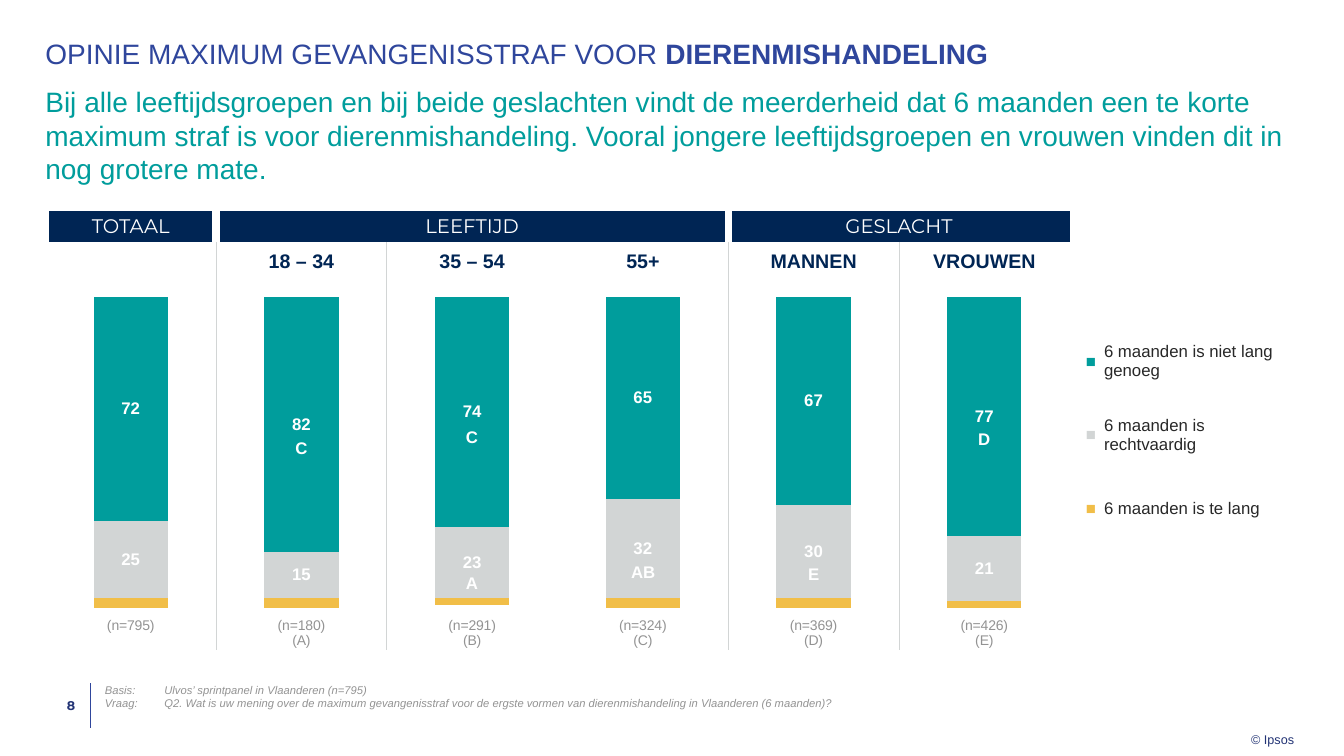
from dataclasses import dataclass

from pptx import Presentation
from pptx.chart.data import CategoryChartData
from pptx.dml.color import RGBColor
from pptx.enum.chart import XL_CHART_TYPE, XL_TICK_LABEL_POSITION, XL_TICK_MARK
from pptx.enum.shapes import MSO_CONNECTOR
from pptx.enum.text import MSO_ANCHOR, PP_ALIGN
from pptx.oxml import parse_xml
from pptx.oxml.ns import nsdecls, qn
from pptx.oxml.xmlchemy import OxmlElement
from pptx.util import Emu, Pt

SCALE = 9144  # EMU in one px, 100 px to the inch
CENTER, RIGHT = PP_ALIGN.CENTER, PP_ALIGN.RIGHT
MIDDLE = MSO_ANCHOR.MIDDLE


@dataclass(frozen=True)
class Theme:
    blue: str = "2F469C"
    ink: str = "233475"
    navy: str = "002554"
    teal: str = "009D9C"
    silver: str = "D2D5D5"
    gold: str = "F1BE48"
    gray: str = "939393"
    dark: str = "282828"
    white: str = "FFFFFF"
    font: str = "Arial"
    head: str = "Montserrat"
    big: int = 20
    mid: int = 14
    body: int = 12
    axis: int = 10
    small: int = 9
    note: int = 8


def px(n):
    return Emu(round(n * SCALE))


def rgb(code):
    return RGBColor.from_string(code)


def style(font, size, color, face, bold=False, italic=False):
    font.size, font.name, font.bold, font.italic = Pt(size), face, bold, italic
    font.color.rgb = rgb(color)


def write(frame, text, size=12, color="282828", face="Arial", bold=False,
          italic=False, align=None, space=None, tab=None):
    """Fill a frame; lines are paragraphs, and parts after | switch bold."""
    for i, line in enumerate(text.split("\n")):
        para = frame.add_paragraph() if i else frame.paragraphs[0]
        if tab:
            stops = OxmlElement("a:tabLst")
            stop = OxmlElement("a:tab")
            stop.set("pos", str(px(tab)))
            stop.set("algn", "l")
            stops.append(stop)
            para._p.get_or_add_pPr().append(stops)
        para.alignment, para.line_spacing = align, space
        for j, part in enumerate(line.split("|")):
            run = para.add_run()
            run.text = part
            style(run.font, size, color, face, bold != bool(j % 2), italic)


def inset(item, left=0, top=0, right=0):
    item.margin_left, item.margin_top = px(left), px(top)
    item.margin_right, item.margin_bottom = px(right), 0


class Deck:
    def __init__(self, theme):
        self.theme = theme
        self.file = Presentation()
        self.file.slide_width, self.file.slide_height = px(1333), px(750)
        self.slide = self.file.slides.add_slide(self.file.slide_layouts[6])
        self.shapes = self.slide.shapes

    def text(self, box, text, wrap=True, anchor=MSO_ANCHOR.TOP, top=0, right=0, **form):
        frame = self.shapes.add_textbox(*map(px, box)).text_frame
        frame.word_wrap, frame.vertical_anchor = wrap, anchor
        inset(frame, top=top, right=right)
        write(frame, text, **form)

    def line(self, x1, y1, x2, y2, color, width):
        line = self.shapes.add_connector(MSO_CONNECTOR.STRAIGHT, *map(px, (x1, y1, x2, y2)))
        line.line.color.rgb, line.line.width = rgb(color), Pt(width)
        line._element.spPr.append(OxmlElement("a:effectLst"))

    def table(self, box, cols, rows, pad=0):
        shape = self.shapes.add_table(len(rows), len(cols), *map(px, box))
        table = shape.table
        table.first_row = table.horz_banding = False
        plain = "{2D5ABB26-0587-4C30-8999-92F81FD0307C}"
        table._tbl.tblPr.find(qn("a:tableStyleId")).text = plain
        for col, width in zip(table.columns, cols):
            col.width = px(width)
        for row, height in zip(table.rows, rows):
            row.height = px(height)
        for cell in table.iter_cells():
            cell.fill.background()
            cell.vertical_anchor = MIDDLE
            inset(cell, left=pad, right=pad)
        return table

    def edge(self, cell, side, color, width):
        cell._tc.get_or_add_tcPr().insert(0, parse_xml(
            f'<a:ln{side} {nsdecls("a")} w="{Pt(width)}"><a:solidFill>'
            f'<a:srgbClr val="{color}"/></a:solidFill></a:ln{side}>'))

    def chart(self, box, names, rows, plot):
        t = self.theme
        data = CategoryChartData()
        data.categories = names
        for label, nums, _ in rows:
            data.add_series(label, nums)
        chart = self.shapes.add_chart(
            XL_CHART_TYPE.COLUMN_STACKED, *map(px, box), data).chart
        chart.has_legend = chart.has_title = False
        style(chart.font, t.axis, t.dark, t.font)

        # Axes: values run down from the top
        for axis in (chart.category_axis, chart.value_axis):
            axis.major_tick_mark = axis.minor_tick_mark = XL_TICK_MARK.NONE
            axis.has_major_gridlines = False
            axis.format.line.fill.background()
        chart.category_axis.tick_label_position = XL_TICK_LABEL_POSITION.HIGH
        style(chart.category_axis.tick_labels.font, t.axis, t.gray, t.font)
        scale = chart.value_axis
        scale.tick_label_position = XL_TICK_LABEL_POSITION.NONE
        scale.minimum_scale, scale.maximum_scale = 0, 100
        scale.reverse_order = True

        # Bars and their values
        bars = chart.plots[0]
        bars.gap_width, bars.overlap, bars.vary_by_categories = 130, 100, False
        for i, (item, row) in enumerate(zip(bars.series, rows)):
            item.format.fill.solid()
            item.format.fill.fore_color.rgb = rgb(row[2])
            if i < 2:
                labels = item.data_labels
                labels.show_value = True
                labels.number_format = "0;0;"
                labels.number_format_is_linked = False
                style(labels.font, t.body, t.white, t.font, bold=True)

        # Fixed plot area
        area = chart._chartSpace.chart.plotArea
        for old in area.findall(qn("c:layout")):
            area.remove(old)
        spots = "".join(f'<c:{k} val="{v}"/>' for k, v in zip("xywh", plot))
        area.insert(0, parse_xml(
            f'<c:layout {nsdecls("c")}><c:manualLayout><c:layoutTarget val="inner"/>'
            f'<c:xMode val="edge"/><c:yMode val="edge"/>{spots}'
            '</c:manualLayout></c:layout>'))


def main():
    t = Theme()
    deck = Deck(t)

    # Footer
    deck.line(90, 678, 90, 722, t.blue, 0.5)
    deck.text((1241, 722, 43, 19), "© Ipsos", wrap=False, top=4, size=t.small, color=t.ink)
    deck.text((45, 678, 45, 43), "8 ", anchor=MIDDLE, right=12, size=t.small,
              color=t.ink, face=t.head, bold=True, align=RIGHT)
    deck.text((104, 678, 1102, 43),
              "Basis:\tUlvos’ sprintpanel in Vlaanderen (n=795)\n"
              "Vraag:\tQ2. Wat is uw mening over de maximum gevangenisstraf voor de "
              "ergste vormen van dierenmishandeling in Vlaanderen (6 maanden)?",
              size=t.note, color=t.gray, italic=True, tab=59)

    # Title and message
    deck.text((45, 40, 1244, 42), "OPINIE MAXIMUM GEVANGENISSTRAF VOOR |DIERENMISHANDELING",
              size=t.big, color=t.blue, space=0.9)
    deck.text((45, 84, 1244, 102),
              "Bij alle leeftijdsgroepen en bij beide geslachten vindt de meerderheid dat "
              "6 maanden een te korte maximum straf is voor dierenmishandeling. Vooral "
              "jongere leeftijdsgroepen en vrouwen vinden dit in nog grotere mate.",
              size=t.big, color=t.teal)

    # Group heads above the bars
    left, wide = 45, 1016
    step = wide / 6
    grid = deck.table((left, 209, wide, 436), [step] * 6, (31, 39, 366))
    for first, last, name in ((0, 0, "TOTAAL"), (1, 3, "LEEFTIJD"), (4, 5, "GESLACHT")):
        cell, end = grid.cell(0, first), grid.cell(0, last)
        if last > first:
            cell.merge(end)
        cell.fill.solid()
        cell.fill.fore_color.rgb = rgb(t.navy)
        write(cell.text_frame, name, size=t.mid, color=t.white, face=t.head, align=CENTER)
        deck.edge(end, "R", t.white, 6)
        deck.edge(cell, "L", t.white, 6)
        for row in (1, 2):
            if first:
                deck.edge(grid.cell(row, first - 1), "R", t.silver, 0.75)
                deck.edge(grid.cell(row, first), "L", t.silver, 0.75)
    for col, name in enumerate(("18 – 34", "35 – 54", "55+", "MANNEN", "VROUWEN"), 1):
        write(grid.cell(1, col).text_frame, name, size=t.mid, color=t.navy,
              bold=True, align=CENTER)

    # Stacked bars
    rows = (("6 maanden is niet lang genoeg", (72, 82, 74, 65, 67, 77), t.teal),
            ("6 maanden is rechtvaardig", (25, 15, 23, 32, 30, 21), t.silver),
            ("6 maanden is te lang", (3, 3, 2, 3, 3, 2), t.gold))
    names = ("(n=795)\n", "(n=180)\n(A)", "(n=291)\n(B)", "(n=324)\n(C)",
             "(n=369)\n(D)", "(n=426)\n(E)")
    deck.chart((left, 280, wide, 367), names, rows, (0, 0.04, 1, 0.84))

    # Legend
    key = deck.table((1060, 322, 228, 219), (31, 197), [73] * 3, pad=4)
    for row, (label, _, color) in enumerate(rows):
        write(key.cell(row, 0).text_frame, "■", size=t.body, color=color, align=RIGHT)
        write(key.cell(row, 1).text_frame, label, size=t.body, color=t.dark)

    # Letters of the groups that differ
    for col, top, mark in ((5, 425, "D"), (4, 559, "E"), (1, 434, "C"),
                           (2, 423, "C"), (2, 568, "A"), (3, 557, "AB")):
        mid = round(left + step * (col + 0.5))
        deck.text((mid - 16, top, 32, 20), mark, size=t.body, color=t.white,
                  bold=True, align=CENTER)

    deck.file.save("out.pptx")


if __name__ == "__main__":
    main()
